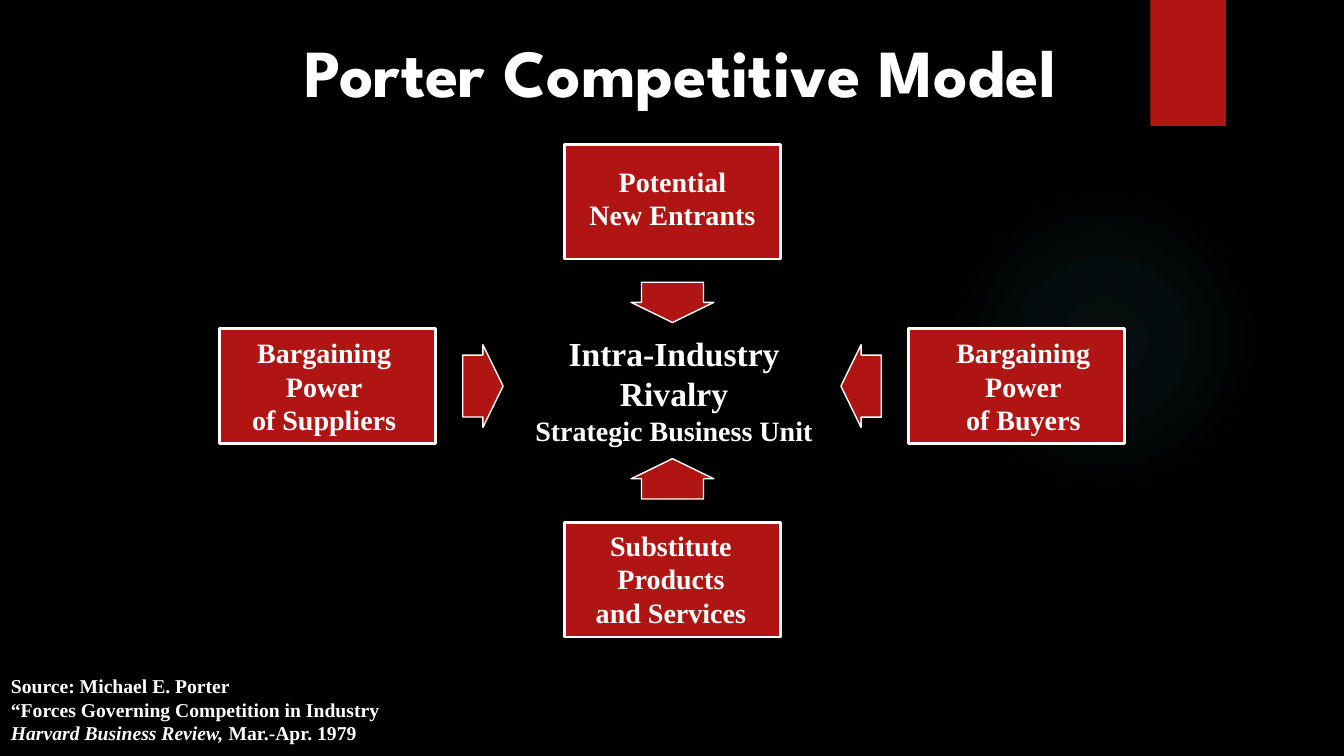
from lxml import etree
from pptx import Presentation
from pptx import util as u
from pptx.dml.color import RGBColor
from pptx.enum import shapes, text
from pptx.oxml import ns

PX = u.Inches(1) // 100


def color(value):
    return RGBColor.from_string(value)


class Board:
    red = "B01513"
    white = "FFFFFF"
    glow = "50B9C1"
    serif = "Times New Roman"

    def __init__(self, slide):
        self.slide = slide
        slide.background.fill.solid()
        slide.background.fill.fore_color.rgb = color("000000")

    def shape(self, kind, box, line=None):
        shape = self.slide.shapes.add_shape(kind, *(n * PX for n in box))
        shape.shadow.inherit = False
        shape.fill.solid()
        shape.fill.fore_color.rgb = color(self.red)
        if line:
            shape.line.color.rgb = color(self.white)
            shape.line.width = u.Pt(line)
        else:
            shape.line.fill.background()
        return shape

    def rectangle(self, box, line=None):
        return self.shape(shapes.MSO_SHAPE.RECTANGLE, box, line)

    def arrow(self, center_x, center_y, rotation):
        width, height = 40, 82
        box = center_x - width // 2, center_y - height // 2, width, height
        arrow = self.shape(shapes.MSO_SHAPE.RIGHT_ARROW, box, 1)
        arrow.adjustments[0], arrow.adjustments[1] = 0.75, 0.5
        arrow.rotation = rotation

    def halo(self, box, stops):
        halo = self.shape(shapes.MSO_SHAPE.OVAL, box)
        properties = halo._element.spPr
        solid = properties.find(ns.qn("a:solidFill"))
        gradient = etree.Element(ns.qn("a:gradFill"), rotWithShape="1")
        stop_list = etree.SubElement(gradient, ns.qn("a:gsLst"))
        for position, alpha in stops:
            stop = etree.SubElement(stop_list, ns.qn("a:gs"), pos=str(position * 1000))
            tint = etree.SubElement(stop, ns.qn("a:srgbClr"), val=self.glow)
            etree.SubElement(tint, ns.qn("a:alpha"), val=str(alpha * 1000))
        path = etree.SubElement(gradient, ns.qn("a:path"), path="circle")
        etree.SubElement(path, ns.qn("a:fillToRect"), l="50000", t="50000", r="50000", b="50000")
        properties.replace(solid, gradient)

    def text(self, box, lines, sizes, font=serif, align=text.PP_ALIGN.CENTER,
             anchor=text.MSO_ANCHOR.TOP, wrap=True):
        frame = self.slide.shapes.add_textbox(*(n * PX for n in box)).text_frame
        frame.word_wrap = wrap
        frame.vertical_anchor = anchor
        frame.text = "\n".join(lines)
        for paragraph, size in zip(frame.paragraphs, sizes):
            paragraph.alignment = align
            paragraph.font.name = font
            paragraph.font.size = u.Pt(size)
            paragraph.font.bold = True
            paragraph.font.color.rgb = color(self.white)
        return frame


def main():
    presentation = Presentation()
    presentation.slide_width = 1333 * PX
    presentation.slide_height = 750 * PX
    board = Board(presentation.slides.add_slide(presentation.slide_layouts[6]))

    board.halo((941, 183, 308, 308), [(0, 7), (36, 6), (69, 0)])
    board.rectangle((1141, 0, 75, 125))

    forces = [
        ((218, 326), (236, 328, 171, 110), ["Bargaining", "Power", "of Suppliers"]),
        ((560, 143), (574, 158, 186, 80), ["Potential", "New Entrants"]),
        ((901, 326), (938, 328, 154, 110), ["Bargaining", "Power", "of Buyers"]),
        ((560, 518), (577, 519, 177, 110), ["Substitute", "Products", "and Services"]),
    ]
    for corner, label_box, lines in forces:
        board.rectangle((*corner, 214, 114), 2)
        board.text(label_box, lines, [20] * len(lines), wrap=False)

    board.text((250, 8, 850, 125), ["Porter Competitive Model"], [48],
               font="League Spartan", anchor=text.MSO_ANCHOR.MIDDLE)
    board.text((496, 325, 345, 124),
               ["Intra-Industry", "Rivalry", "Strategic Business Unit"], [24, 24, 20])

    for center_x, center_y, rotation in [(479, 383, 0), (667, 300, 90),
                                         (854, 383, 180), (667, 475, 270)]:
        board.arrow(center_x, center_y, rotation)

    source = board.text(
        (1, 664, 471, 81),
        ["Source: Michael E. Porter", "“Forces Governing Competition in Industry",
         "Harvard Business Review, "],
        [14] * 3, align=text.PP_ALIGN.LEFT)
    citation = source.paragraphs[-1]
    citation.runs[0].font.italic = True
    citation.add_run().text = "Mar.-Apr. 1979"

    presentation.save("out.pptx")


if __name__ == "__main__":
    main()
